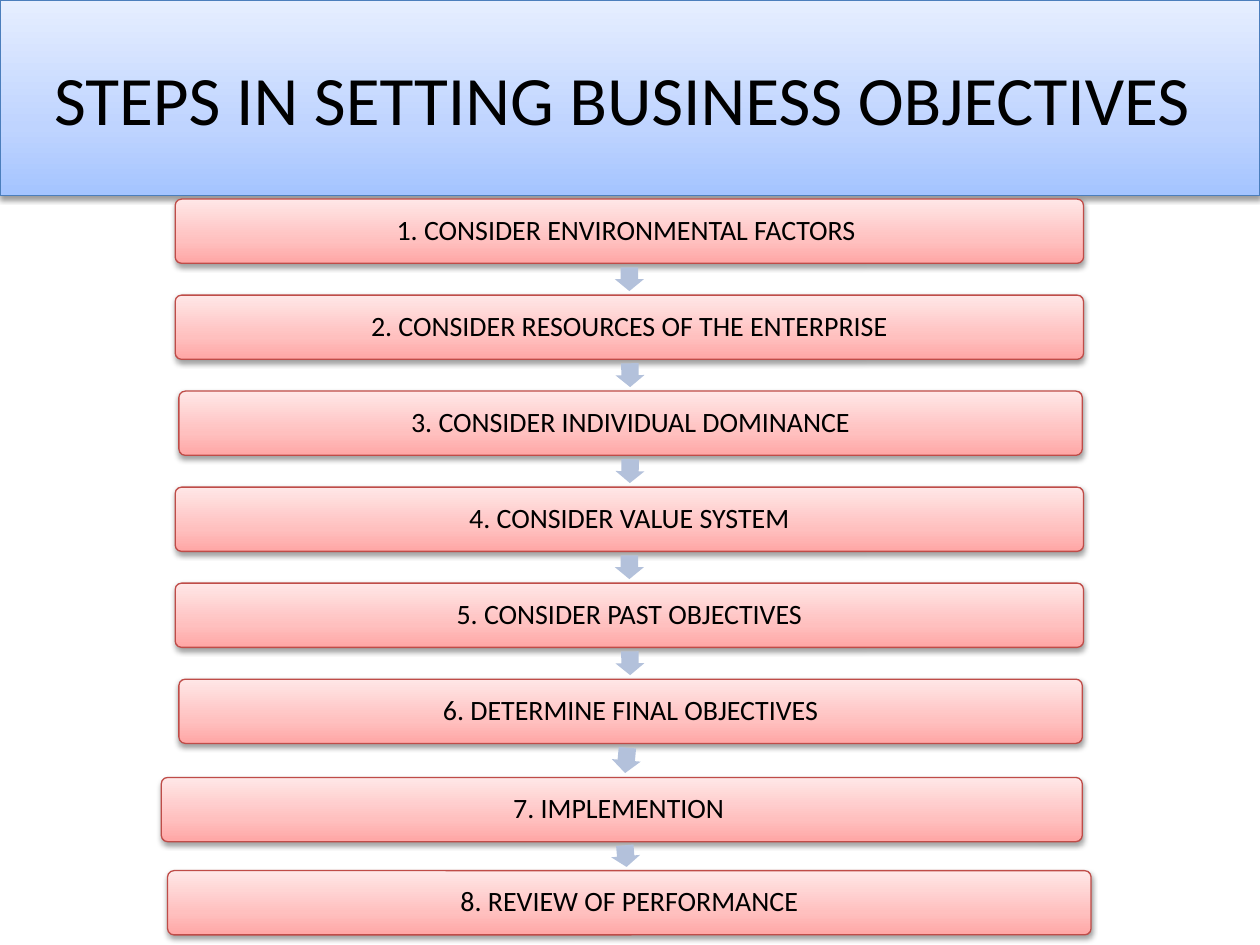
import math
from itertools import pairwise

from pptx import Presentation
from pptx.dml.color import RGBColor
from pptx.enum import shapes, text
from pptx.oxml import parse_xml
from pptx.oxml.ns import nsdecls, qn
from pptx.util import Inches, Pt

BLACK = RGBColor(0x00, 0x00, 0x00)
BLUE_LINE = RGBColor(0x4B, 0x7E, 0xBC)
RED_LINE = RGBColor(0xBF, 0x4C, 0x48)
ARROW_BLUE = RGBColor(0xB3, 0xC1, 0xDB)
# Gradient colours run from the bottom edge to the top edge.
BLUE_SHADES = (RGBColor(0xA4, 0xC4, 0xFF), RGBColor(0xBF, 0xD4, 0xFF), RGBColor(0xE6, 0xEE, 0xFF))
RED_SHADES = (RGBColor(0xFF, 0xA6, 0xA5), RGBColor(0xFF, 0xC0, 0xBF), RGBColor(0xFF, 0xE7, 0xE7))
STOPS = (0, 35, 100)

STEP_HEIGHT = 0.51
STEP_PITCH = 0.762
FIRST_TOP = 1.58
WIDE, NARROW = (1.39, 7.21), (1.42, 7.17)

# Label, (left, width), top
STEPS = [
    (label, span, FIRST_TOP + i * STEP_PITCH)
    for i, (label, span) in enumerate([
        ("1. CONSIDER ENVIRONMENTAL FACTORS ", WIDE),
        ("2. CONSIDER RESOURCES OF THE ENTERPRISE", WIDE),
        ("3. CONSIDER INDIVIDUAL DOMINANCE", NARROW),
        ("4. CONSIDER VALUE SYSTEM", WIDE),
        ("5. CONSIDER PAST OBJECTIVES", WIDE),
        ("6. DETERMINE FINAL OBJECTIVES", NARROW),
    ])
] + [
    ("7. IMPLEMENTION ", (1.28, 7.31), 6.17),
    ("8. REVIEW OF PERFORMANCE", (1.33, 7.33), 6.91),
]


def fill_gradient(shape, shades):
    shape.fill.gradient()
    shape.fill.gradient_angle = 90
    stop_list = shape._element.spPr.find(".//" + qn("a:gsLst"))
    for stop in list(stop_list):
        stop_list.remove(stop)
    for position, shade in zip(STOPS, shades):
        stop_list.append(parse_xml(
            f'<a:gs {nsdecls("a")} pos="{position * 1000}">'
            f'<a:srgbClr val="{shade}"/></a:gs>'))


def drop_shadow(shape):
    shape.shadow.inherit = False
    effects = shape._element.spPr.find(qn("a:effectLst"))
    effects.append(parse_xml(
        f'<a:outerShdw {nsdecls("a")} blurRad="{Pt(3.1)}" dist="{Pt(1.6)}" '
        'dir="5400000" rotWithShape="0"><a:srgbClr val="000000">'
        '<a:alpha val="38000"/></a:srgbClr></a:outerShdw>'))


def add_panel(slide, kind, box, shades, line_color, label, size):
    """Add a shaded, shadowed shape with one centred line of text."""
    panel = slide.shapes.add_shape(kind, *map(Inches, box))
    fill_gradient(panel, shades)
    panel.line.color.rgb = line_color
    panel.line.width = Pt(0.75)
    drop_shadow(panel)
    frame = panel.text_frame
    frame.word_wrap = True
    frame.vertical_anchor = text.MSO_ANCHOR.MIDDLE
    paragraph = frame.paragraphs[0]
    paragraph.alignment = text.PP_ALIGN.CENTER
    run = paragraph.add_run()
    run.text = label
    run.font.name = "Calibri"
    run.font.size = Pt(size)
    run.font.color.rgb = BLACK
    return panel


def add_title(slide, box):
    add_panel(slide, shapes.MSO_SHAPE.RECTANGLE, box, BLUE_SHADES, BLUE_LINE,
              "STEPS IN SETTING BUSINESS OBJECTIVES ", 39.6)


def add_step(slide, box, label):
    step = add_panel(slide, shapes.MSO_SHAPE.ROUNDED_RECTANGLE, box,
                     RED_SHADES, RED_LINE, label, 16)
    step.adjustments[0] = 0.1
    frame = step.text_frame
    frame.margin_left = frame.margin_right = Inches(0.07)
    frame.margin_top = frame.margin_bottom = Inches(0.07)
    frame.paragraphs[0].line_spacing = 0.9


def add_step_arrow(slide, upper, lower):
    """Point an arrow from the centre of one step box to the next, inside the gap."""
    upper_x, lower_x = (left + width / 2 for left, _, width, _ in (upper, lower))
    upper_bottom, lower_top = upper[1] + upper[3], lower[1]
    length, thickness = 0.75 * (lower_top - upper_bottom), 0.23
    center_x = (upper_x + lower_x) / 2
    center_y = (upper_bottom + lower_top) / 2
    arrow = slide.shapes.add_shape(
        shapes.MSO_SHAPE.RIGHT_ARROW,
        Inches(center_x - length / 2), Inches(center_y - thickness / 2),
        Inches(length), Inches(thickness))
    arrow.rotation = math.degrees(math.atan2(lower_top - upper[1], lower_x - upper_x))
    arrow.adjustments[0] = 0.6
    arrow.adjustments[1] = 0.5
    arrow.fill.solid()
    arrow.fill.fore_color.rgb = ARROW_BLUE
    arrow.line.fill.background()
    arrow.shadow.inherit = False


def add_step_chain(slide, steps):
    boxes = [(left, top, width, STEP_HEIGHT) for _, (left, width), top in steps]
    for box, (label, _, _) in zip(boxes, steps):
        add_step(slide, box, label)
    for upper, lower in pairwise(boxes):
        add_step_arrow(slide, upper, lower)


def main():
    deck = Presentation()
    deck.slide_width, deck.slide_height = Inches(10), Inches(7.5)
    slide = deck.slides.add_slide(deck.slide_layouts[6])
    add_title(slide, (0, 0, 10, 1.55))
    add_step_chain(slide, STEPS)
    deck.save("out.pptx")


if __name__ == "__main__":
    main()
